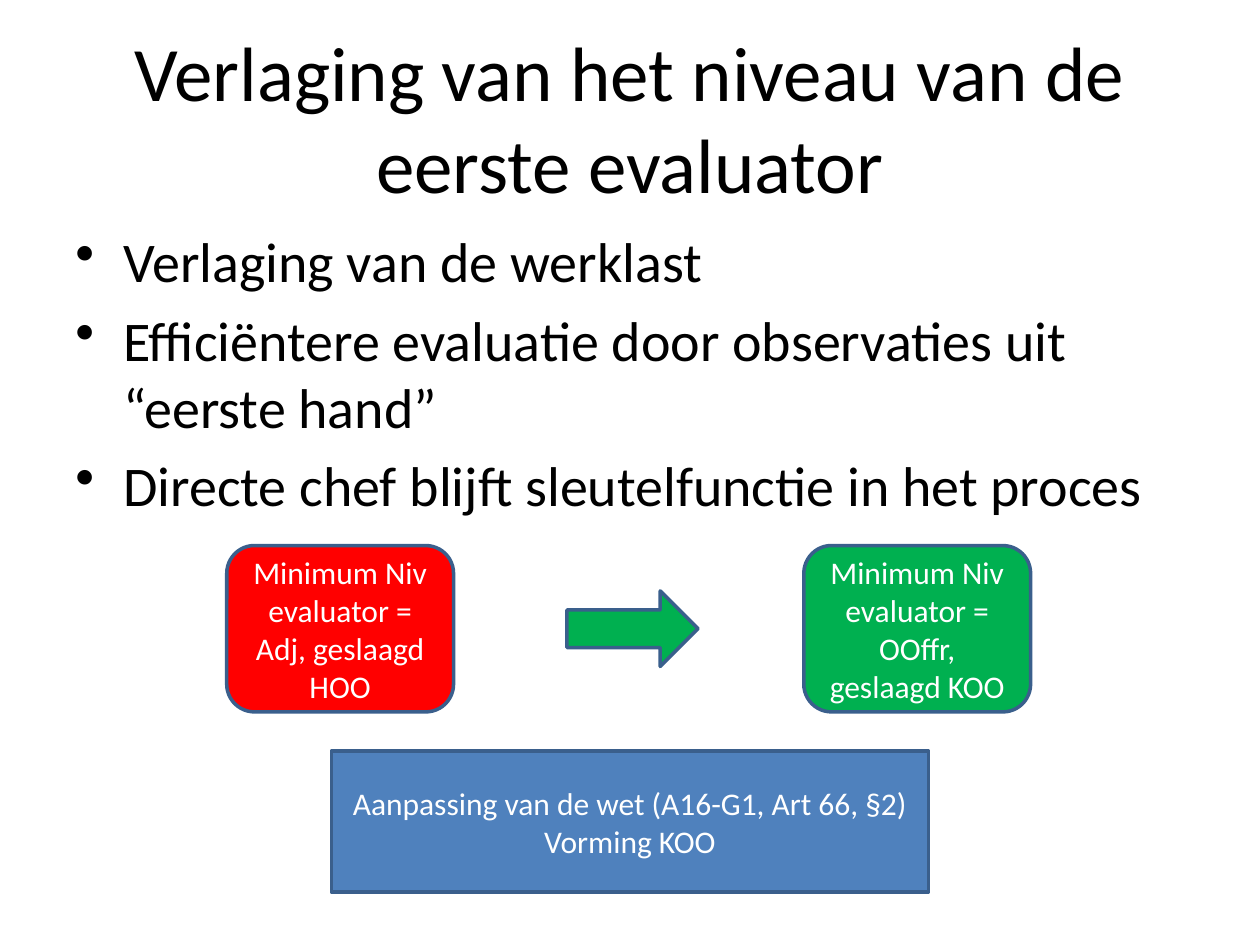
import pptx
import pptx.util
import pptx.dml.color
import pptx.enum.shapes
import pptx.enum.text
import pptx.oxml.ns
import lxml.etree

Inches = pptx.util.Inches
Pt = pptx.util.Pt
Shape = pptx.enum.shapes.MSO_SHAPE
Align = pptx.enum.text.PP_ALIGN
Anchor = pptx.enum.text.MSO_ANCHOR

COLORS = {
    "black": "000000",
    "white": "FFFFFF",
    "red": "FF0000",
    "green": "00B050",
    "blue": "4F81BD",
    "edge": "3A5F8C",
}


def color(name):
    return pptx.dml.color.RGBColor.from_string(COLORS[name])


def add_bullet(para, indent):
    props = para._p.get_or_add_pPr()
    props.set("marL", str(Inches(indent)))
    props.set("indent", str(-Inches(indent)))
    mark = lxml.etree.SubElement(props, pptx.oxml.ns.qn("a:buChar"))
    mark.set("char", "•")


def write(frame, lines, size=18, ink="white", font="Calibri",
          align=Align.CENTER, anchor=Anchor.MIDDLE, bullet=False, gap=0):
    """Fill a text frame, one paragraph for each line."""
    frame.word_wrap = True
    frame.vertical_anchor = anchor
    for i, line in enumerate(lines):
        para = frame.add_paragraph() if i else frame.paragraphs[0]
        if bullet:
            add_bullet(para, 0.38)
        para.alignment = align
        if i and gap:
            para.space_before = Pt(gap)
        run = para.add_run()
        run.text = line
        run.font.name = font
        run.font.size = Pt(size)
        run.font.color.rgb = color(ink)


class Deck:
    """Holds the line style and the current slide."""

    def __init__(self, edge="edge", weight=2):
        self.edge = edge
        self.weight = weight
        self.show = pptx.Presentation()
        self.show.slide_width = Inches(10)
        self.show.slide_height = Inches(7.5)
        self.slide = self.show.slides.add_slide(self.show.slide_layouts[6])

    def text(self, box, lines, **style):
        item = self.slide.shapes.add_textbox(*map(Inches, box))
        write(item.text_frame, lines, **style)

    def shape(self, kind, box, fill, lines=()):
        item = self.slide.shapes.add_shape(kind, *map(Inches, box))
        item.shadow.inherit = False
        item.fill.solid()
        item.fill.fore_color.rgb = color(fill)
        item.line.color.rgb = color(self.edge)
        item.line.width = Pt(self.weight)
        write(item.text_frame, lines)


def main():
    deck = Deck()

    # Title and bullet list
    deck.text((0.5, 0.3, 9, 1.25),
              ["Verlaging van het niveau van de eerste evaluator"],
              size=44, ink="black")
    deck.text((0.5, 1.75, 9, 4.95),
              ["Verlaging van de werklast",
               "Efficiëntere evaluatie door observaties uit “eerste hand”",
               "Directe chef blijft sleutelfunctie in het proces"],
              size=32, ink="black", align=Align.LEFT, anchor=Anchor.TOP,
              bullet=True, gap=6.4)

    # Old and new minimum level
    levels = [
        (1.8, "red", "Minimum Niv evaluator = Adj, geslaagd HOO"),
        (6.38, "green", "Minimum Niv evaluator = OOffr, geslaagd KOO"),
    ]
    for left, fill, label in levels:
        deck.shape(Shape.ROUNDED_RECTANGLE, (left, 4.33, 1.8, 1.32),
                   fill, [label])
    deck.shape(Shape.RIGHT_ARROW, (4.5, 4.69, 1.04, 0.6), "green")

    # Measures needed
    deck.shape(Shape.RECTANGLE, (2.63, 5.96, 4.74, 1.12), "blue",
               ["Aanpassing van de wet (A16-G1, Art 66, §2)", "Vorming KOO"])

    deck.show.save("out.pptx")


if __name__ == "__main__":
    main()
